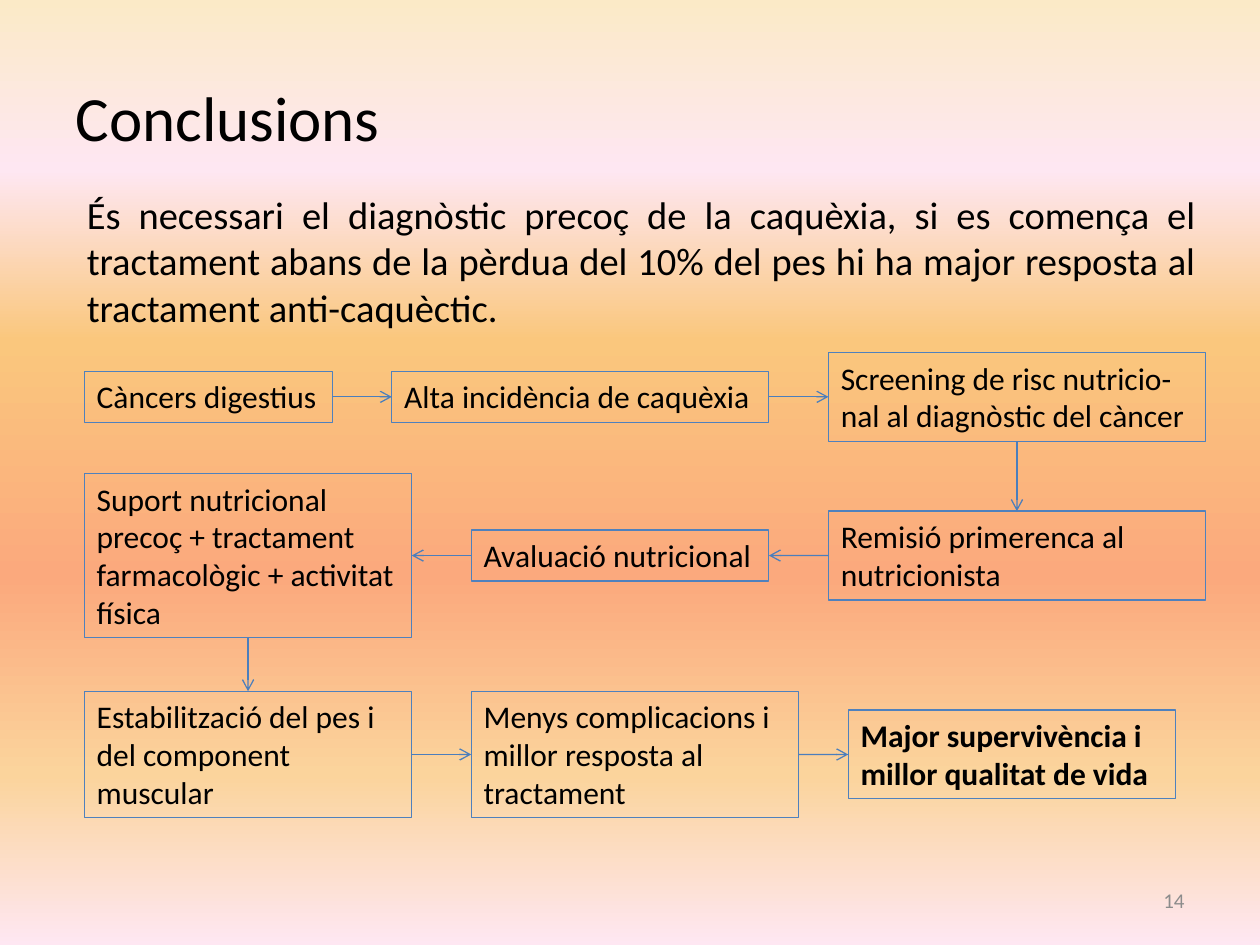
from dataclasses import dataclass

from lxml.etree import SubElement
from pptx import Presentation
from pptx.dml.color import RGBColor
from pptx.enum.shapes import MSO_CONNECTOR, MSO_SHAPE
from pptx.enum.text import MSO_ANCHOR, MSO_AUTO_SIZE, PP_ALIGN
from pptx.oxml.ns import qn
from pptx.util import Cm, Pt


@dataclass(frozen=True)
class Theme:
    font: str = "Calibri"
    text: str = "000000"
    muted: str = "8C8C8C"
    border: str = "4F81BD"
    arrow: str = "4B7EBC"
    background: tuple = ((0, "FBEAC7"), (18, "FEE7F2"), (36, "FAC77D"),
                         (61, "FBA97D"), (82, "FBD49C"), (100, "FEE7F2"))
    title_size: int = 36
    body_size: int = 22
    box_size: int = 18
    number_size: int = 12
    line_width: float = 0.75


theme = Theme()


def write(sp, text, size, color=theme.text, align=PP_ALIGN.LEFT,
          anchor=MSO_ANCHOR.TOP, bold=False):
    tf = sp.text_frame
    tf.word_wrap = True
    tf.vertical_anchor = anchor
    p = tf.paragraphs[0]
    p.text = text
    p.alignment = align
    p.font.name = theme.font
    p.font.size = Pt(size)
    p.font.bold = bold
    p.font.color.rgb = RGBColor.from_string(color)
    return tf


prs = Presentation()
prs.slide_width, prs.slide_height = Cm(25.4), Cm(19.05)
s = prs.slides.add_slide(prs.slide_layouts[5])

fill = s.background.fill
fill.gradient()
fill.gradient_angle = 270
stops = s.element.find(".//" + qn("a:gsLst"))
for stop in list(stops):
    stops.remove(stop)
for position, color in theme.background:
    stop = SubElement(stops, qn("a:gs"), pos=str(position * 1000))
    SubElement(stop, qn("a:srgbClr"), val=color)

title = s.shapes.title
title.left, title.top, title.width, title.height = Cm(1.27), Cm(0.76), Cm(23.42), Cm(3.18)
write(title, "Conclusions", theme.title_size, anchor=MSO_ANCHOR.MIDDLE)

body = s.shapes.add_textbox(Cm(1.5), Cm(3.73), Cm(22.86), Cm(13.41))
write(body, "És necessari el diagnòstic precoç de la caquèxia, si es comença el "
      "tractament abans de la pèrdua del 10% del pes hi ha major resposta al "
      "tractament anti-caquèctic.", theme.body_size, align=PP_ALIGN.JUSTIFY)

number = s.shapes.add_textbox(Cm(18.2), Cm(17.65), Cm(5.93), Cm(1.01))
write(number, "14", theme.number_size, theme.muted, PP_ALIGN.RIGHT, MSO_ANCHOR.MIDDLE)

TOP, LEFT, BOTTOM, RIGHT = range(4)
ROW_1, ROW_2, ROW_3 = 8, 11.2, 15.21
steps = [
    ("Càncers digestius", 1.7, ROW_1, 5, 1, RIGHT),
    ("Alta incidència de caquèxia", 7.9, ROW_1, 7.6, 1, RIGHT),
    ("Screening de risc nutricio-nal al diagnòstic del càncer", 16.7, ROW_1, 7.6, 2, BOTTOM),
    ("Remisió primerenca al nutricionista", 16.7, ROW_2, 7.6, 2, LEFT),
    ("Avaluació nutricional", 9.5, ROW_2, 6, 1, LEFT),
    ("Suport nutricional precoç + tractament farmacològic + activitat física",
     1.7, ROW_2, 6.6, 4, BOTTOM),
    ("Estabilització del pes i del component muscular", 1.7, ROW_3, 6.6, 3, RIGHT),
    ("Menys complicacions i millor resposta al tractament", 9.5, ROW_3, 6.6, 3, RIGHT),
    ("Major supervivència i millor qualitat de vida", 17.1, ROW_3, 6.6, 2, None),
]

boxes = []
for text, left, middle, width, lines, exit_side in steps:
    height = 1.03 + 0.76 * (lines - 1)
    sp = s.shapes.add_shape(MSO_SHAPE.RECTANGLE, Cm(left), Cm(middle - height / 2),
                            Cm(width), Cm(height))
    sp.shadow.inherit = False
    sp.fill.background()
    sp.line.color.rgb = RGBColor.from_string(theme.border)
    sp.line.width = Pt(theme.line_width)
    tf = write(sp, text, theme.box_size, bold=exit_side is None)
    tf.auto_size = MSO_AUTO_SIZE.SHAPE_TO_FIT_TEXT
    boxes.append(sp)

for step, box, following in zip(steps, boxes, boxes[1:]):
    exit_side = step[-1]
    link = s.shapes.add_connector(MSO_CONNECTOR.STRAIGHT, 0, 0, 0, 0)
    link.begin_connect(box, exit_side)
    link.end_connect(following, (exit_side + 2) % 4)
    link.line.color.rgb = RGBColor.from_string(theme.arrow)
    link.line.width = Pt(theme.line_width)
    SubElement(link.line._get_or_add_ln(), qn("a:tailEnd"), type="arrow")
    SubElement(link.element.spPr, qn("a:effectLst"))

prs.save("out.pptx")
